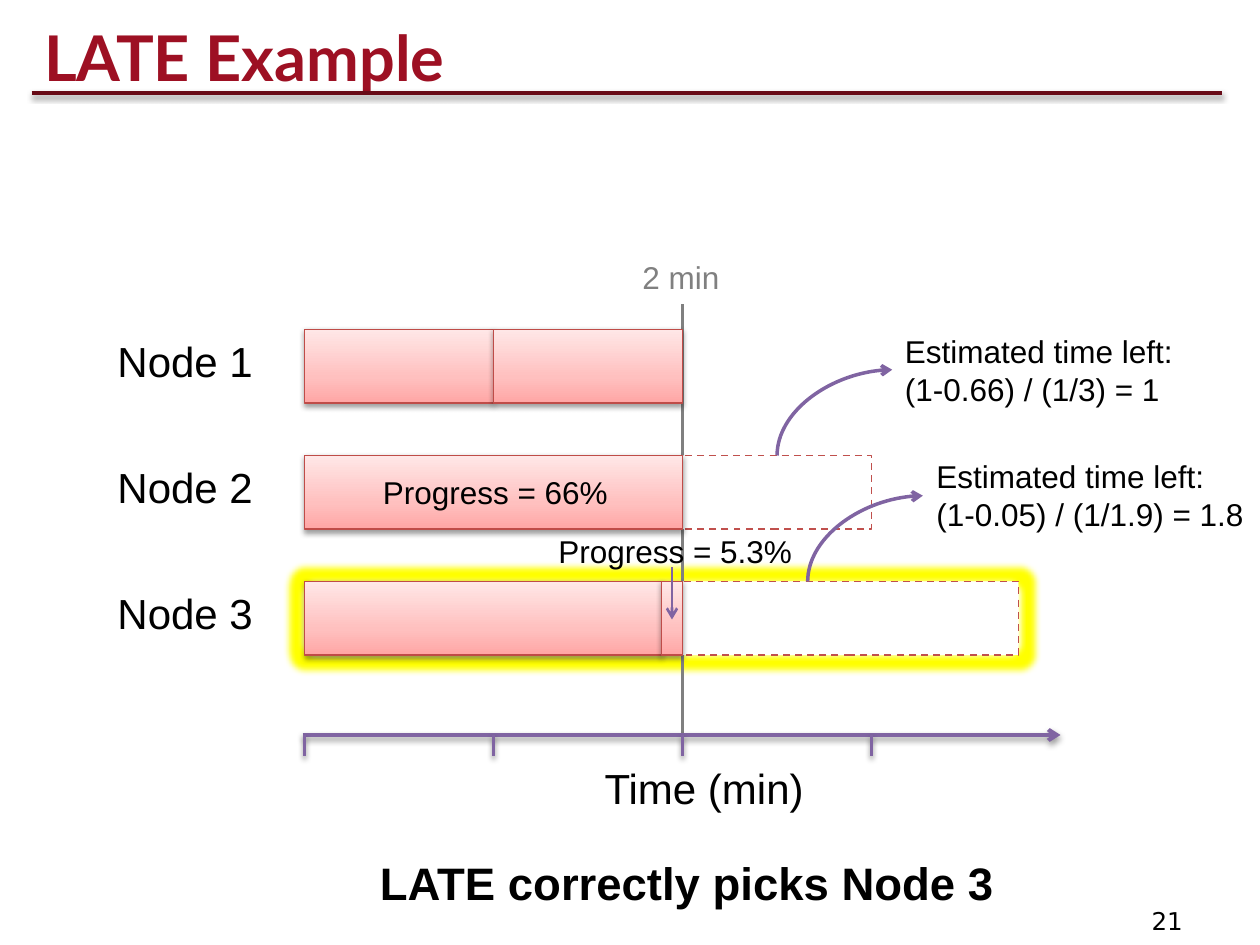
from lxml import etree
from pptx import Presentation
from pptx import util as u
from pptx.dml.color import RGBColor
from pptx.enum import dml, shapes, text
from pptx.oxml import ns

A = ns.nsdecls("a")
PURPLE, GRAY, RED = "8064A2", "808080", "C0504D"
SHADOW = (f'<a:effectLst {A}><a:outerShdw blurRad="40000" dist="20000" dir="5400000" rotWithShape="0">'
          '<a:srgbClr val="000000"><a:alpha val="38000"/></a:srgbClr></a:outerShdw></a:effectLst>')
GLOW = f'<a:effectLst {A}><a:glow rad="101600"><a:srgbClr val="FFFF00"/></a:glow></a:effectLst>'
STOPS = ((0, "FFA6A5"), (35, "FFC0BF"), (100, "FFE7E7"))


def color(value):
    return RGBColor.from_string(value)


class Painter:
    def __init__(self, s, font="Arial"):
        self.s = s
        self.font = font

    def effect(self, sp, xml):
        spPr = sp.element.spPr
        for old in spPr.findall(ns.qn("a:effectLst")):
            spPr.remove(old)
        spPr.append(etree.fromstring(xml))

    def add_lines(self, sp, lines, size, fill="000000", bold=False, font=None):
        tf = sp.text_frame
        for i, line in enumerate(lines):
            p = tf.add_paragraph() if i else tf.paragraphs[0]
            p.alignment = text.PP_ALIGN.LEFT
            r = p.add_run()
            r.text = line
            r.font.size = u.Pt(size)
            r.font.name = font or self.font
            r.font.bold = bold
            r.font.color.rgb = color(fill)

    def title(self, line, x, y, w, h):
        sp = self.s.shapes.title
        sp.left, sp.top, sp.width, sp.height = u.Pt(x), u.Pt(y), u.Pt(w), u.Pt(h)
        sp.text_frame.vertical_anchor = text.MSO_ANCHOR.MIDDLE
        self.add_lines(sp, [line], 36, "9D1023", True, "Lato")

    def label(self, lines, x, y, w, h, size=18, wrap=False, **style):
        sp = self.s.shapes.add_textbox(u.Pt(x), u.Pt(y), u.Pt(w), u.Pt(h))
        sp.text_frame.word_wrap = wrap
        self.add_lines(sp, lines, size, **style)

    def box(self, x, y, w, h, line, weight=1, kind=shapes.MSO_SHAPE.RECTANGLE):
        sp = self.s.shapes.add_shape(kind, u.Pt(x), u.Pt(y), u.Pt(w), u.Pt(h))
        sp.shadow.inherit = False
        sp.line.color.rgb = color(line)
        sp.line.width = u.Pt(weight)
        return sp

    def highlight(self, x, y, w, h):
        sp = self.box(x, y, w, h, "FFFF00", 0.75, shapes.MSO_SHAPE.ROUNDED_RECTANGLE)
        sp.fill.background()
        self.effect(sp, GLOW)

    def remaining(self, x, y, w, h):
        sp = self.box(x, y, w, h, RED)
        sp.fill.solid()
        sp.fill.fore_color.rgb = color("FFFFFF")
        sp.line.dash_style = dml.MSO_LINE.DASH

    def bar(self, x, y, w, h):
        sp = self.box(x, y, w, h, "BF4C48")
        stops = "".join(f'<a:gs pos="{pos * 1000}"><a:srgbClr val="{c}"/></a:gs>' for pos, c in STOPS)
        grad = etree.fromstring(f'<a:gradFill {A} rotWithShape="1"><a:gsLst>{stops}</a:gsLst>'
                                '<a:lin ang="16200000" scaled="0"/></a:gradFill>')
        sp.element.spPr.find(ns.qn("a:prstGeom")).addnext(grad)
        self.effect(sp, SHADOW)

    def line(self, x1, y1, x2, y2, stroke=PURPLE, weight=2, arrow=False, shadow=False,
             kind=shapes.MSO_CONNECTOR.STRAIGHT):
        c = self.s.shapes.add_connector(kind, u.Pt(x1), u.Pt(y1), u.Pt(x2), u.Pt(y2))
        c.line.color.rgb = color(stroke)
        c.line.width = u.Pt(weight)
        if arrow:
            ln = c.element.spPr.find(ns.qn("a:ln"))
            ln.append(etree.fromstring(f'<a:tailEnd {A} type="arrow"/>'))
        self.effect(c, SHADOW if shadow else f"<a:effectLst {A}/>")
        return c

    def curve(self, x1, y1, x2, y2):
        cx, cy = (x1 + x2) / 2, (y1 + y2) / 2
        dx, dy = (y1 - y2) / 2, (x2 - x1) / 2
        c = self.line(cx + dx, cy + dy, cx - dx, cy - dy, arrow=True, kind=shapes.MSO_CONNECTOR.CURVE)
        spPr = c.element.spPr
        spPr.find(ns.qn("a:xfrm")).set("rot", "5400000")
        spPr.find(ns.qn("a:prstGeom")).set("prst", "curvedConnector2")


def main():
    prs = Presentation()
    prs.slide_width, prs.slide_height = u.Pt(720), u.Pt(540)
    d = Painter(prs.slides.add_slide(prs.slide_layouts[5]))

    start, minute, bar_h, axis_y = 174, 108, 42, 420
    now = start + 2 * minute
    rows = [188.3 + 72 * i for i in range(3)]

    d.line(18, 53.3, 698.4, 53.3, "680B17", shadow=True)
    d.title("LATE Example", 18, 6.5, 680.4, 51)

    d.highlight(169.2, rows[2] - 4, 417.6, 50)
    d.line(now, 422.6, now, 174, GRAY, 1.75)
    d.remaining(now, rows[2], 192, bar_h)
    d.remaining(now, rows[1], minute, bar_h)

    segments = ((minute, minute), (2 * minute,), (204, 12))
    for i, (y, widths) in enumerate(zip(rows, segments), 1):
        d.label([f"Node {i}"], 60, y, 93, 36.5, 24)
        x = start
        for w in widths:
            d.bar(x, y, w, bar_h)
            x += w

    d.line(start - 1, axis_y, 606, axis_y, weight=2.25, arrow=True, shadow=True)
    for i in range(4):
        x = start + i * minute
        d.line(x, axis_y, x, axis_y + 12, shadow=True)
    d.label(["2 min"], 360, 144, 59, 29, fill=GRAY)
    d.label(["Time (min)"], 338.4, 432, 129.6, 36.5, 24)

    d.label(["Progress = 66%"], 211.7, 267, 145, 29)
    d.label(["Progress = 5.3%"], 312, 300.2, 149, 29)
    d.line(384, 324, 384, 354, weight=1.5, arrow=True)

    estimates = ((444, rows[1], 510, 186, 180, "(1-0.66) / (1/3) = 1"),
                 (461.5, rows[2], 528, 257.8, 192, "(1-0.05) / (1/1.9) = 1.8"))
    for x, y, left, top, w, formula in estimates:
        d.curve(x, y, x + 65.8, y - 49)
        d.label(["Estimated time left:", formula], left, top, w, 51, wrap=True)

    d.label(["LATE correctly picks Node 3"], 210, 485.3, 368.6, 39, 26, bold=True)
    d.label(["21"], 651, 514, 53, 23, 14, wrap=True, font="DejaVu Sans")
    prs.save("out.pptx")


if __name__ == "__main__":
    main()
